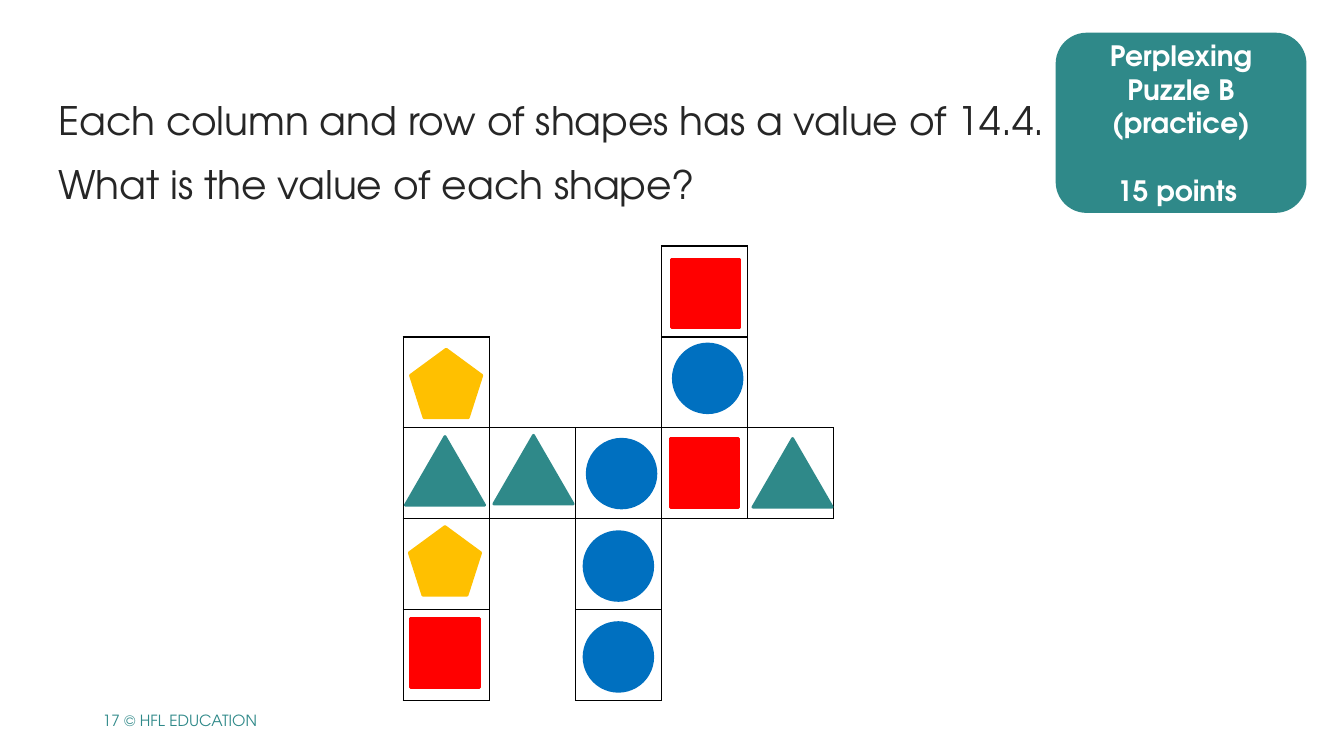
from lxml.etree import SubElement
from pptx import Presentation
from pptx.dml.color import RGBColor
from pptx.enum.shapes import MSO_SHAPE as Preset
from pptx.enum.text import MSO_ANCHOR as Anchor, PP_ALIGN as Align
from pptx.oxml.ns import qn
from pptx.util import Cm, Pt

TEAL = RGBColor(0x2F, 0x89, 0x89)
BLUE = RGBColor(0x00, 0x70, 0xC0)
RED = RGBColor(0xFF, 0x00, 0x00)
AMBER = RGBColor(0xFF, 0xC0, 0x00)
INK = RGBColor(0x26, 0x26, 0x26)
BLACK = RGBColor(0x00, 0x00, 0x00)
WHITE = RGBColor(0xFF, 0xFF, 0xFF)
FONT = "TeX Gyre Adventor"

GRID_SIZE = 5
CELL_WIDTH, CELL_HEIGHT = 2.17, 2.29
EDGES = {"lnL": (0, -1), "lnR": (0, 1), "lnT": (-1, 0), "lnB": (1, 0)}

KINDS = {
    "square": (Preset.RECTANGLE, RED, 1.73),
    "circle": (Preset.OVAL, BLUE, 1.73),
    "pentagon": (Preset.REGULAR_PENTAGON, AMBER, 1.8),
    "triangle": (Preset.ISOSCELES_TRIANGLE, TEAL, 2.0),
}
TOKEN_HEIGHT = 1.73
TOKENS = {
    (0, 3): ("square", 0.03, 0.05),
    (1, 0): ("pentagon", 0, 0.03),
    (1, 3): ("circle", 0.08, -0.1),
    (2, 0): ("triangle", -0.03, -0.06),
    (2, 1): ("triangle", 0.03, -0.09),
    (2, 2): ("circle", 0.08, 0.01),
    (2, 3): ("square", 0, -0.01),
    (2, 4): ("triangle", 0.05, -0.01),
    (3, 0): ("pentagon", -0.03, -0.08),
    (3, 2): ("circle", 0, 0.05),
    (4, 0): ("square", -0.03, -0.05),
    (4, 2): ("circle", 0, 0.05),
}


def write_lines(frame, lines, size, color, bold=False, align=Align.LEFT):
    """Write one paragraph per line and format its runs."""
    frame.word_wrap = True
    frame.text = "\n".join(lines)
    for para in frame.paragraphs:
        para.alignment = align
        for span in para.runs:
            span.font.name = FONT
            span.font.size = Pt(size)
            span.font.bold = bold
            span.font.color.rgb = color


def add_solid(page, preset, color, left, top, width, height):
    """Add a shape whose outline matches its fill."""
    solid = page.shapes.add_shape(preset, Cm(left), Cm(top), Cm(width), Cm(height))
    solid.shadow.inherit = False
    solid.fill.solid()
    solid.fill.fore_color.rgb = color
    solid.line.color.rgb = color
    solid.line.width = Pt(2)
    return solid


def add_footer(page, left, top, width, height):
    """Place the page number and copyright line."""
    box = page.shapes.add_textbox(Cm(left), Cm(top), Cm(width), Cm(height))
    write_lines(box.text_frame, ["17 © HFL EDUCATION"], 11, TEAL)
    box.text_frame.vertical_anchor = Anchor.MIDDLE


def add_question(page, left, top, width, height):
    """Place the puzzle question."""
    box = page.shapes.add_textbox(Cm(left), Cm(top), Cm(width), Cm(height))
    lines = ["Each column and row of shapes has a value of 14.4.",
             "What is the value of each shape?"]
    write_lines(box.text_frame, lines, 28, INK)
    for para in box.text_frame.paragraphs:
        para.space_after = Pt(12)


def add_badge(page, left, top, width, height):
    """Place the rounded badge with the puzzle name and points."""
    badge = add_solid(page, Preset.ROUNDED_RECTANGLE, TEAL, left, top, width, height)
    frame = badge.text_frame
    write_lines(frame, ["Perplexing Puzzle B", "(practice)", "15 points "],
                20, WHITE, True, Align.CENTER)
    frame.vertical_anchor = Anchor.MIDDLE
    frame.paragraphs[-1].space_before = Pt(24)


def style_cell(cell, row, column):
    """Clear a cell and outline the edges that touch a shape."""
    cell.fill.background()
    properties = cell._tc.get_or_add_tcPr()
    for index, (tag, (down, right)) in enumerate(EDGES.items()):
        edge = SubElement(properties, qn(f"a:{tag}"), w=str(Pt(1)))
        properties.insert(index, edge)
        if (row, column) in TOKENS or (row + down, column + right) in TOKENS:
            fill = SubElement(edge, qn("a:solidFill"))
            SubElement(fill, qn("a:srgbClr"), val=str(BLACK))
        else:
            SubElement(edge, qn("a:noFill"))


def add_puzzle(page, left, top):
    """Place the grid and centre each shape in its cell, with a small nudge."""
    frame = page.shapes.add_table(GRID_SIZE, GRID_SIZE, Cm(left), Cm(top),
                                  Cm(GRID_SIZE * CELL_WIDTH), Cm(GRID_SIZE * CELL_HEIGHT))
    table = frame.table
    table.first_row = False
    table.horz_banding = False
    for column in table.columns:
        column.width = Cm(CELL_WIDTH)
    for row_index, row in enumerate(table.rows):
        row.height = Cm(CELL_HEIGHT)
        for column_index, cell in enumerate(row.cells):
            style_cell(cell, row_index, column_index)
    for (row, column), (kind, nudge_x, nudge_y) in TOKENS.items():
        preset, color, width = KINDS[kind]
        token_left = left + (column + 0.5) * CELL_WIDTH - width / 2 + nudge_x
        token_top = top + (row + 0.5) * CELL_HEIGHT - TOKEN_HEIGHT / 2 + nudge_y
        add_solid(page, preset, color, token_left, token_top, width, TOKEN_HEIGHT)


def main():
    """Build the puzzle slide and save it."""
    deck = Presentation()
    deck.slide_width, deck.slide_height = Cm(33.87), Cm(19.05)
    page = deck.slides.add_slide(deck.slide_layouts[6])
    add_footer(page, 2.34, 17.65, 6.99, 1.02)
    add_question(page, 1.22, 2.31, 27.03, 2.82)
    add_badge(page, 26.64, 0.86, 6.25, 4.47)
    add_puzzle(page, 10.16, 6.2)
    deck.save("out.pptx")


if __name__ == "__main__":
    main()
